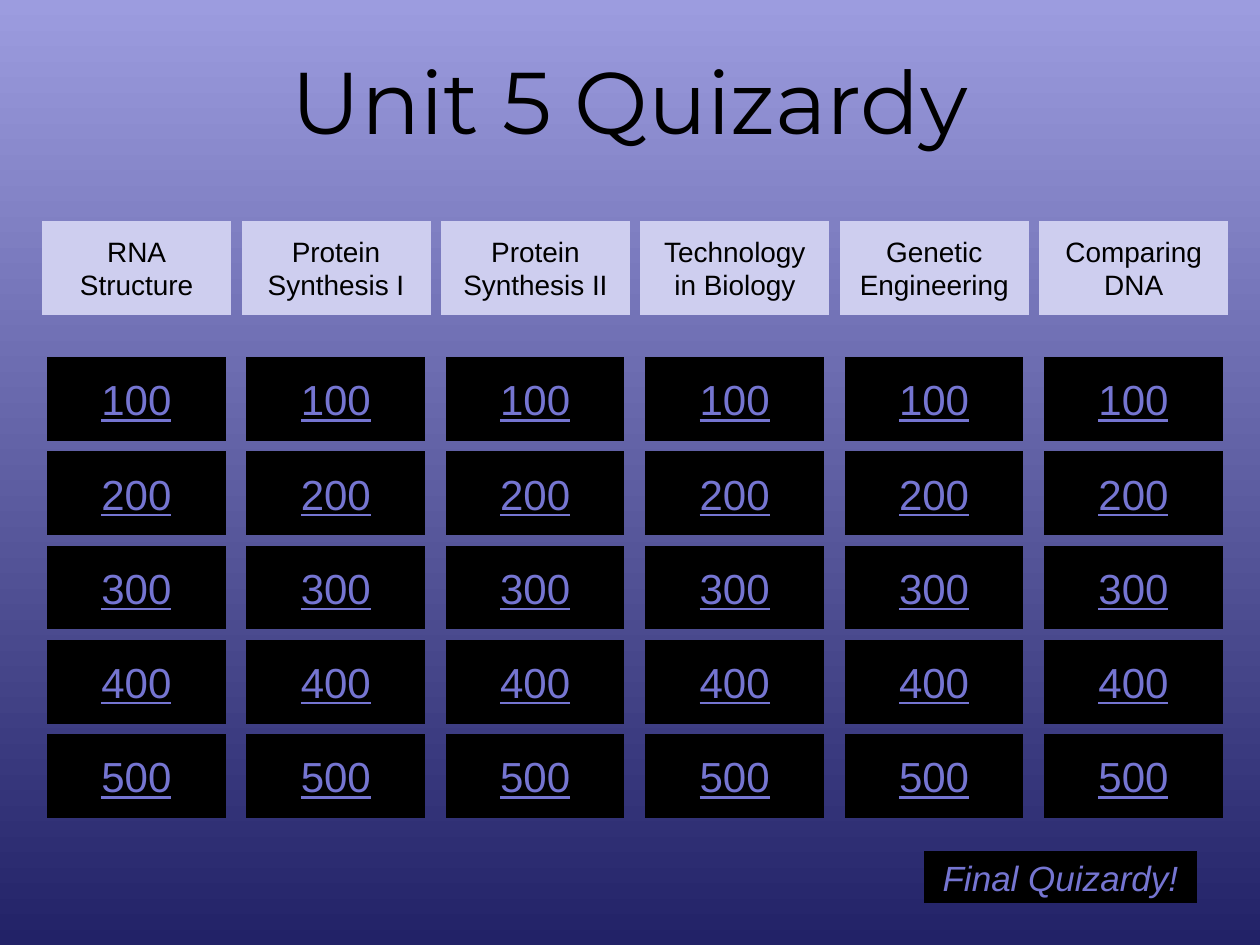
from pptx import Presentation
from pptx.dml.color import RGBColor
from pptx.enum.shapes import MSO_SHAPE
from pptx.enum.text import MSO_ANCHOR, PP_ALIGN
from pptx.util import Cm, Pt

BUTTON = MSO_SHAPE.ACTION_BUTTON_CUSTOM
MIDDLE = MSO_ANCHOR.MIDDLE
CENTER = PP_ALIGN.CENTER

COLORS = {
    "sky": "9C9CDF",
    "night": "222267",
    "header": "CECEEF",
    "black": "000000",
    "link": "7575D1",
}
CATEGORIES = [
    "RNA\nStructure",
    "Protein\nSynthesis I",
    "Protein\nSynthesis II",
    "Technology\nin Biology",
    "Genetic\nEngineering",
    "Comparing\nDNA",
]
POINTS = [100, 200, 300, 400, 500]
COLUMN_STEP, ROW_STEP = 4.02, 1.9


def color(name):
    return RGBColor.from_string(COLORS[name])


class Board:
    """Draws on one slide in a shared style; boxes are (left, top, width, height) in cm."""

    def __init__(self, slide, body_font="Arial", title_font="Montserrat"):
        self.slide = slide
        self.body_font = body_font
        self.title_font = title_font

    def background(self, top, bottom):
        fill = self.slide.background.fill
        fill.gradient()
        fill.gradient_angle = 270
        for stop, name, position in zip(fill.gradient_stops, (top, bottom), (0, 1)):
            stop.color.rgb = color(name)
            stop.position = position

    def set_text(self, s, text, font, size, ink, wrap=False, underline=None, italic=None):
        tf = s.text_frame
        tf.text = text
        tf.word_wrap = wrap
        tf.vertical_anchor = MIDDLE
        for p in tf.paragraphs:
            p.alignment = CENTER
            for r in p.runs:
                r.font.name = font
                r.font.size = Pt(size)
                r.font.color.rgb = color(ink)
                r.font.underline = underline
                r.font.italic = italic

    def title(self, box, text):
        s = self.slide.shapes.add_textbox(*map(Cm, box))
        self.set_text(s, text, self.title_font, 50, "black", wrap=True)

    def button(self, box, text, size, fill="black", ink="link", **style):
        s = self.slide.shapes.add_shape(BUTTON, *map(Cm, box))
        s.shadow.inherit = False
        s.fill.solid()
        s.fill.fore_color.rgb = color(fill)
        s.line.fill.background()
        self.set_text(s, text, self.body_font, size, ink, **style)


def main():
    prs = Presentation()
    prs.slide_width, prs.slide_height = Cm(25.4), Cm(19.05)
    board = Board(prs.slides.add_slide(prs.slide_layouts[6]))

    board.background("sky", "night")
    board.title((0.85, 0.42, 23.7, 3.18), "Unit 5 Quizardy")
    for col, category in enumerate(CATEGORIES):
        x = col * COLUMN_STEP
        board.button((0.85 + x, 4.45, 3.81, 1.9), category, 16, "header", "black")
        for row, points in enumerate(POINTS):
            box = (0.95 + x, 7.2 + row * ROW_STEP, 3.6, 1.69)
            board.button(box, str(points), 24, underline=True)
    board.button((18.63, 17.15, 5.5, 1.06), "Final Quizardy!", 20, italic=True)

    prs.save("out.pptx")


if __name__ == "__main__":
    main()
